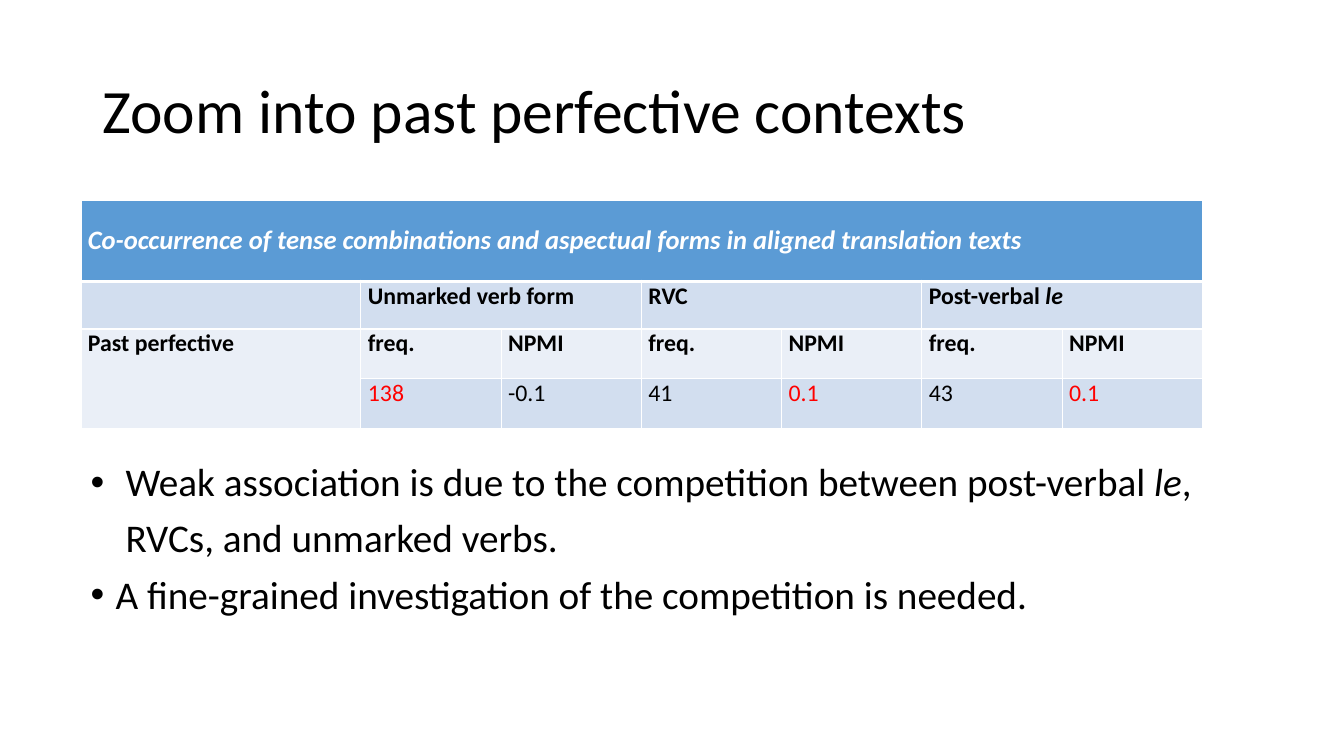
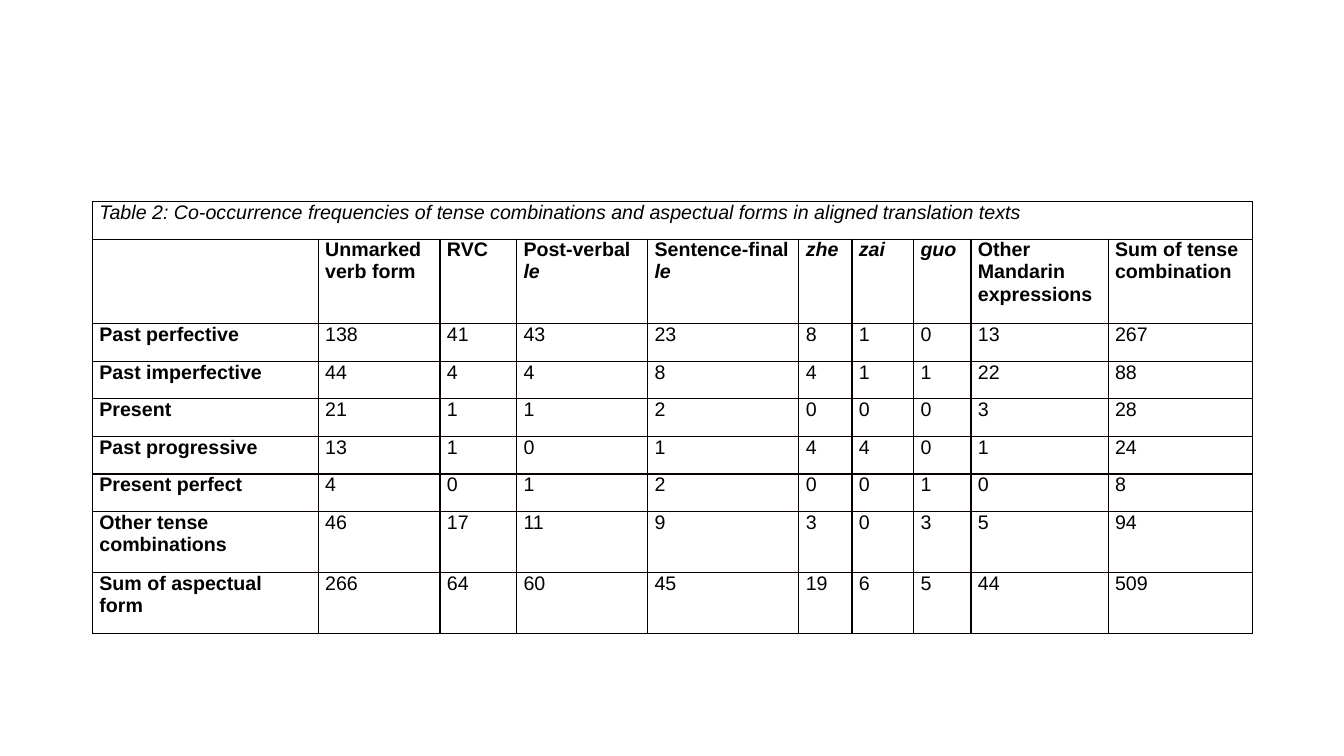
from lxml.etree import SubElement
from pptx import Presentation
from pptx.dml.color import RGBColor
from pptx.enum.text import MSO_ANCHOR as Anchor, PP_ALIGN as Align
from pptx.oxml.ns import qn
from pptx.util import Pt

BLACK = RGBColor(0x00, 0x00, 0x00)
WHITE = RGBColor(0xFF, 0xFF, 0xFF)
RED = RGBColor(0xFF, 0x00, 0x00)
HEADER_BLUE = RGBColor(0x5B, 0x9B, 0xD5)
BAND_DARK = RGBColor(0xD2, 0xDE, 0xEF)
BAND_LIGHT = RGBColor(0xEA, 0xEF, 0xF7)
RULE_BLACK = RGBColor(0x08, 0x00, 0x00)

CELL_MARGINS = {
    "margin_left": Pt(5),
    "margin_top": Pt(0),
    "margin_right": Pt(5),
    "margin_bottom": Pt(10),
}


def set_values(target, values):
    for name, value in values.items():
        setattr(target, name, value)


class Deck:
    def __init__(self, width, height):
        self.file = Presentation()
        self.file.slide_width = Pt(width)
        self.file.slide_height = Pt(height)
        self.page = None

    def add_page(self, title=None):
        layout = self.file.slide_layouts[6 if title is None else 5]
        self.page = self.file.slides.add_slide(layout)
        if title is not None:
            box = self.page.shapes.title
            set_values(box, {"left": Pt(66), "top": Pt(29), "width": Pt(828), "height": Pt(104)})
            box.text_frame.vertical_anchor = Anchor.MIDDLE
            para = box.text_frame.paragraphs[0]
            set_values(para, {"alignment": Align.LEFT, "line_spacing": 0.9})
            self.add_spans(para, title, BLACK, name="Calibri", size=Pt(44))

    def add_spans(self, para, text, color, **font):
        for index, part in enumerate(text.split("*")):
            if part:
                span = para.add_run()
                span.text = part
                set_values(span.font, font | {"italic": index % 2 == 1})
                span.font.color.rgb = color

    def bullets(self, left, top, width, height, lines):
        box = self.page.shapes.add_textbox(Pt(left), Pt(top), Pt(width), Pt(height))
        box.text_frame.word_wrap = True
        for index, (text, indent, marked) in enumerate(lines):
            para = box.text_frame.paragraphs[0] if index == 0 else box.text_frame.add_paragraph()
            set_values(para, {"line_spacing": 0.9, "space_before": Pt(10)})
            properties = para._p.get_or_add_pPr()
            properties.set("marL", str(Pt(indent)))
            properties.set("indent", str(Pt(-indent if marked else 0)))
            if marked:
                SubElement(properties, qn("a:buFont"), typeface="Arial")
                SubElement(properties, qn("a:buChar"), char="•")
            self.add_spans(para, text, BLACK, name="Calibri", size=Pt(28))

    def table(self, left, top, widths, heights, merges):
        frame = self.page.shapes.add_table(
            len(heights), len(widths), Pt(left), Pt(top), Pt(sum(widths)), Pt(sum(heights))
        )
        grid = frame.table
        set_values(grid, {"first_row": False, "horz_banding": False})
        for column, width in zip(grid.columns, widths):
            column.width = Pt(width)
        for row, height in zip(grid.rows, heights):
            row.height = Pt(height)
        for first_row, first_column, last_row, last_column in merges:
            grid.cell(first_row, first_column).merge(grid.cell(last_row, last_column))
        return grid

    def style_cell(self, cell, fill, rule, top=1, bottom=1):
        set_values(cell, CELL_MARGINS)
        properties = cell._tc.get_or_add_tcPr()
        for side, weight in {"L": 1, "R": 1, "T": top, "B": bottom}.items():
            line = SubElement(properties, qn(f"a:ln{side}"), w=str(Pt(weight)))
            paint = SubElement(line, qn("a:solidFill"))
            SubElement(paint, qn("a:srgbClr"), val=str(rule))
        if fill is None:
            cell.fill.background()
        else:
            cell.fill.solid()
            cell.fill.fore_color.rgb = fill

    def fill_cell(self, cell, text, color, **font):
        self.add_spans(cell.text_frame.paragraphs[0], text, color, **font)


def add_perfective_page(deck):
    deck.add_page("Zoom into past perfective contexts")
    rows = [
        ["*Co-occurrence of tense combinations and aspectual forms in aligned translation texts*"],
        ["", "Unmarked verb form", "", "RVC", "", "Post-verbal *le*", ""],
        ["Past perfective"] + ["freq.", "NPMI"] * 3,
        ["", "138", "-0.1", "41", "0.1", "43", "0.1"],
    ]
    merges = [(0, 0, 0, 6), (2, 0, 3, 0)] + [(1, start, 1, start + 1) for start in (1, 3, 5)]
    grid = deck.table(57.8, 143.5, [200] + [100.2] * 6, [57.5, 34, 35.5, 35.5], merges)
    fills = [HEADER_BLUE, BAND_DARK, BAND_LIGHT, BAND_DARK]
    for row, fill in enumerate(fills):
        for column in range(7):
            deck.style_cell(
                grid.cell(row, column), fill, WHITE,
                top=3 if row == 1 else 1, bottom=3 if row == 0 else 1,
            )
    grid.cell(0, 0).margin_top = Pt(17)
    for row, texts in enumerate(rows):
        for column, text in enumerate(texts):
            color = WHITE if row == 0 else RED if text in ("138", "0.1") else BLACK
            deck.fill_cell(
                grid.cell(row, column), text, color,
                name="Calibri", size=Pt(19 if row == 0 else 17), bold=row < 3,
            )
    deck.bullets(57.6, 327, 828, 160, [
        ("Weak association is due to the competition between post-verbal *le*,", 25, True),
        ("RVCs, and unmarked verbs.", 25, False),
        ("A fine-grained investigation of the competition is needed.", 18, True),
    ])


def add_frequency_page(deck):
    deck.add_page()
    rows = [
        ["*Table 2: Co-occurrence frequencies of tense combinations and aspectual forms "
         "in aligned translation texts*"],
        ["", "Unmarked verb form", "RVC", "Post-verbal *le*", "Sentence-final *le*", "*zhe*",
         "*zai*", "*guo*", "Other Mandarin expressions", "Sum of tense combination"],
        ["Past perfective", 138, 41, 43, 23, 8, 1, 0, 13, 267],
        ["Past imperfective", 44, 4, 4, 8, 4, 1, 1, 22, 88],
        ["Present", 21, 1, 1, 2, 0, 0, 0, 3, 28],
        ["Past progressive", 13, 1, 0, 1, 4, 4, 0, 1, 24],
        ["Present perfect", 4, 0, 1, 2, 0, 0, 1, 0, 8],
        ["Other tense combinations", 46, 17, 11, 9, 3, 0, 3, 5, 94],
        ["Sum of aspectual form", 266, 64, 60, 45, 19, 6, 5, 44, 509],
    ]
    widths = [161.3, 87, 54.7, 93.6, 108, 38, 44, 41, 98, 103]
    heights = [26, 58] + [26] * 5 + [42] * 2
    grid = deck.table(66, 144, widths, heights, [(0, 0, 0, 9)])
    for row, texts in enumerate(rows):
        for column in range(len(widths)):
            deck.style_cell(grid.cell(row, column), None, RULE_BLACK)
        for column, text in enumerate(texts):
            deck.fill_cell(
                grid.cell(row, column), str(text), BLACK, name="Arial", size=Pt(14),
                bold=row == 1 or (row > 1 and column == 0),
            )


def main():
    deck = Deck(960, 540)
    add_perfective_page(deck)
    add_frequency_page(deck)
    deck.file.save("out.pptx")


if __name__ == "__main__":
    main()
